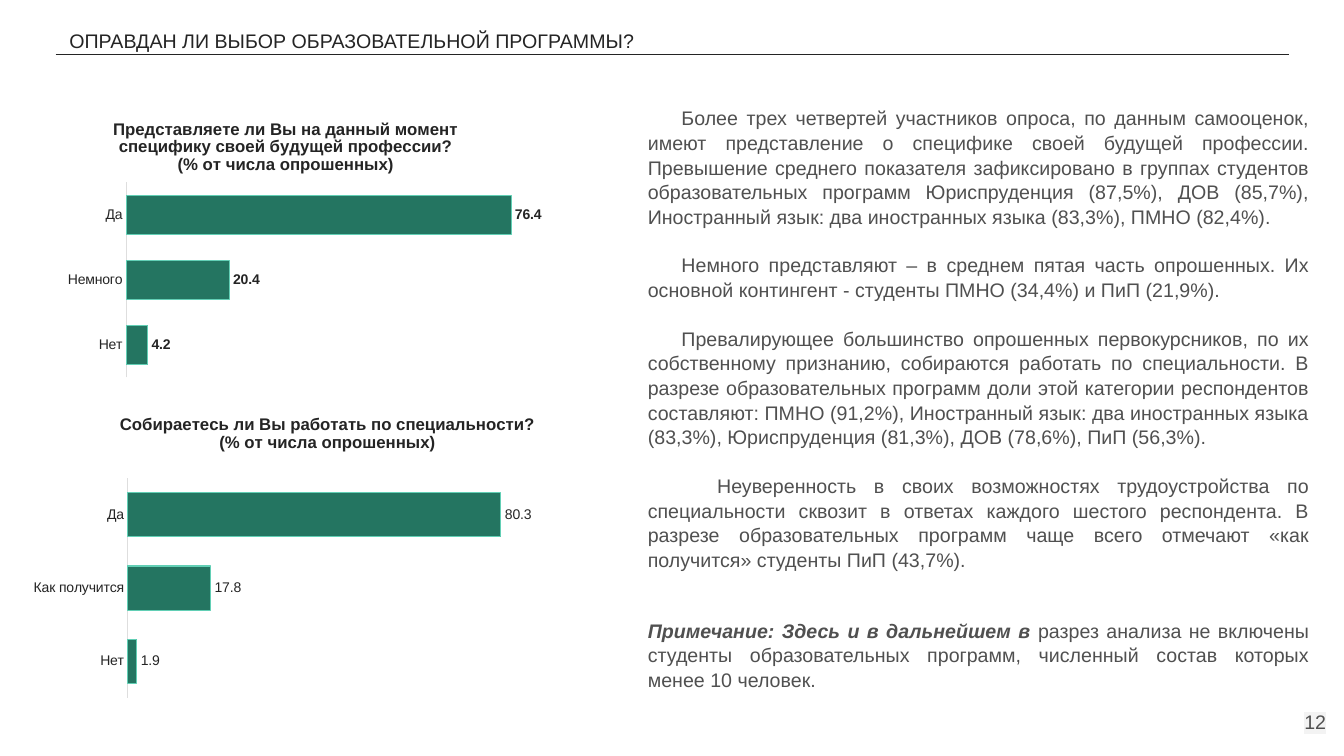
from lxml import etree
from pptx import Presentation
from pptx.chart.data import CategoryChartData
from pptx.dml.color import RGBColor as RGB
from pptx.enum.chart import XL_CHART_TYPE as CHART, XL_LABEL_POSITION as LABEL_POS
from pptx.enum.chart import XL_TICK_MARK as TICK
from pptx.enum.shapes import MSO_CONNECTOR as CONN
from pptx.enum.text import PP_ALIGN as ALIGN
from pptx.oxml import parse_xml
from pptx.oxml.ns import nsdecls, qn
from pptx.util import Pt

PX = 9525  # EMU in one px, 96 px to the inch
FONT = "Arial"
COLORS = {
    "ink": "242424",
    "body": "505050",
    "highlight": "F3F3F3",
    "bar": "247561",
    "bar_edge": "62CFB5",
    "axis": "DEDEDE",
}

COMMENTS = [
    # first-line indent in px, space before in pt, text
    (32, 0, "Более трех четвертей участников опроса, по данным самооценок, имеют "
            "представление о специфике своей будущей профессии. Превышение среднего "
            "показателя зафиксировано в группах студентов образовательных программ "
            "Юриспруденция (87,5%), ДОВ (85,7%), Иностранный язык: два иностранных "
            "языка (83,3%), ПМНО (82,4%)."),
    (32, 17, "Немного представляют – в среднем пятая часть опрошенных. Их основной "
             "контингент - студенты ПМНО (34,4%) и ПиП (21,9%)."),
    (32, 17, "Превалирующее большинство опрошенных первокурсников, по их собственному "
             "признанию, собираются работать по специальности. В разрезе "
             "образовательных программ доли этой категории респондентов составляют: "
             "ПМНО (91,2%), Иностранный язык: два иностранных языка (83,3%), "
             "Юриспруденция (81,3%), ДОВ (78,6%), ПиП (56,3%)."),
    (66, 17, "Неуверенность в своих возможностях трудоустройства по специальности "
             "сквозит в ответах каждого шестого респондента. В разрезе "
             "образовательных программ чаще всего отмечают «как получится» студенты "
             "ПиП (43,7%)."),
]
NOTE_LEAD = "Примечание: Здесь и в дальнейшем в"
NOTE_REST = (" разрез анализа не включены студенты образовательных программ, "
             "численный состав которых менее 10 человек.")


def px(*lengths):
    return [round(n * PX) for n in lengths]


def color(name):
    return RGB.from_string(COLORS[name])


def style(font, size, name="ink", bold=False, italic=False):
    font.name, font.size = FONT, Pt(size)
    font.bold, font.italic = bold, italic
    font.color.rgb = color(name)


def add_text(p, text, size=14, name="body", bold=False, italic=False, highlight=None):
    r = p.add_run()
    r.text = text
    style(r.font, size, name, bold, italic)
    if highlight:
        mark = parse_xml(f'<a:highlight {nsdecls("a")}>'
                         f'<a:srgbClr val="{COLORS[highlight]}"/></a:highlight>')
        r.font.fill  # the highlight follows the text fill
        r.font._element.find(qn("a:solidFill")).addnext(mark)
    return r


def add_box(s, box, inset):
    tf = s.shapes.add_textbox(*px(*box)).text_frame
    tf.word_wrap = True
    tf.margin_left = tf.margin_top = tf.margin_right = tf.margin_bottom = inset * PX
    return tf


def add_rule(s, x1, y1, x2, y2):
    line = s.shapes.add_connector(CONN.STRAIGHT, *px(x1, y1, x2, y2))
    line.line.color.rgb = color("ink")
    line.line.width = Pt(0.75)
    etree.SubElement(line.element.spPr, qn("a:effectLst"))


def set_layout(holder, index, inner=False, **fractions):
    old = holder.find(qn("c:layout"))
    if old is not None:
        holder.remove(old)
    target = '<c:layoutTarget val="inner"/>' if inner else ""
    modes = "".join(f'<c:{k}Mode val="edge"/>' for k in "xy")
    values = "".join(f'<c:{k} val="{v}"/>' for k, v in fractions.items())
    holder.insert(index, parse_xml(
        f'<c:layout {nsdecls("c")}><c:manualLayout>{target}{modes}{values}'
        "</c:manualLayout></c:layout>"))


def add_bars(s, box, title, title_at, plot, answers, bold_labels=False):
    data = CategoryChartData()
    data.categories = list(answers)
    data.add_series("Series 1", list(answers.values()))
    chart = s.shapes.add_chart(CHART.BAR_CLUSTERED, *px(*box), data).chart
    style(chart.font, 10)
    chart.has_legend = False

    # Title
    chart.has_title = True
    tf = chart.chart_title.text_frame
    for i, line in enumerate(title):
        p = tf.add_paragraph() if i else tf.paragraphs[0]
        add_text(p, line, size=12, name="ink", bold=True)
    x, y = title_at
    set_layout(chart.chart_title.element, 1, x=x, y=y)

    # Axes and plot area
    cats, vals = chart.category_axis, chart.value_axis
    cats.major_tick_mark = cats.minor_tick_mark = TICK.NONE
    cats.format.line.color.rgb = color("axis")
    cats.format.line.width = Pt(0.75)
    style(cats.tick_labels.font, 10)
    vals.minimum_scale, vals.maximum_scale = 0, 90
    vals.has_major_gridlines = False
    vals.visible = False
    x, y, w, h = plot
    set_layout(chart.element.find(".//" + qn("c:plotArea")), 0, inner=True, x=x, y=y, w=w, h=h)

    # Bars and their values
    bars = chart.plots[0]
    bars.gap_width = 66
    bars.vary_by_categories = False
    look = bars.series[0].format
    look.fill.solid()
    look.fill.fore_color.rgb = color("bar")
    look.line.color.rgb = color("bar_edge")
    look.line.width = Pt(0.75)
    bars.has_data_labels = True
    labels = bars.data_labels
    labels.show_value = True
    labels.position = LABEL_POS.OUTSIDE_END
    style(labels.font, 10, bold=bold_labels)


def add_comments(s):
    tf = add_box(s, (605, 88, 654, 577), 12)
    p = tf.paragraphs[0]
    for indent, before, text in COMMENTS:
        p.space_before = Pt(before)
        p._p.get_or_add_pPr().set("indent", str(indent * PX))
        add_text(p, text)
        p = tf.add_paragraph()
    p.space_before = Pt(33)
    add_text(p, NOTE_LEAD, bold=True, italic=True)
    add_text(p, NOTE_REST)
    for p in tf.paragraphs:
        p.alignment = ALIGN.JUSTIFY
        p.line_spacing = 1.05


def main():
    prs = Presentation()
    prs.slide_width, prs.slide_height = px(1280, 720)
    s = prs.slides.add_slide(prs.slide_layouts[6])

    # Heading
    add_rule(s, 53, 52, 1228, 52)
    heading = add_box(s, (56, 18, 575, 35), 10)
    add_text(heading.paragraphs[0], "ОПРАВДАН ЛИ ВЫБОР ОБРАЗОВАТЕЛЬНОЙ ПРОГРАММЫ?", name="ink")

    # Survey charts
    add_bars(s, (32, 94, 520, 266),
             ["Представляете ли Вы на данный момент",
              "специфику своей будущей профессии?",
              "(% от числа опрошенных)"],
             (0.14, 0.06), (0.17, 0.3, 0.83, 0.7),
             {"Нет": 4.2, "Немного": 20.4, "Да": 76.4}, bold_labels=True)
    add_bars(s, (21, 386, 531, 279),
             ["Собираетесь ли Вы работать по специальности?",
              "(% от числа опрошенных)"],
             (0.17, 0.02), (0.19, 0.25, 0.75, 0.75),
             {"Нет": 1.9, "Как получится": 17.8, "Да": 80.3})

    # Comments and page number
    add_comments(s)
    p = add_box(s, (1198, 665, 77, 55), 12).paragraphs[0]
    p.alignment = ALIGN.RIGHT
    add_text(p, "12", highlight="highlight")

    prs.save("out.pptx")


if __name__ == "__main__":
    main()
